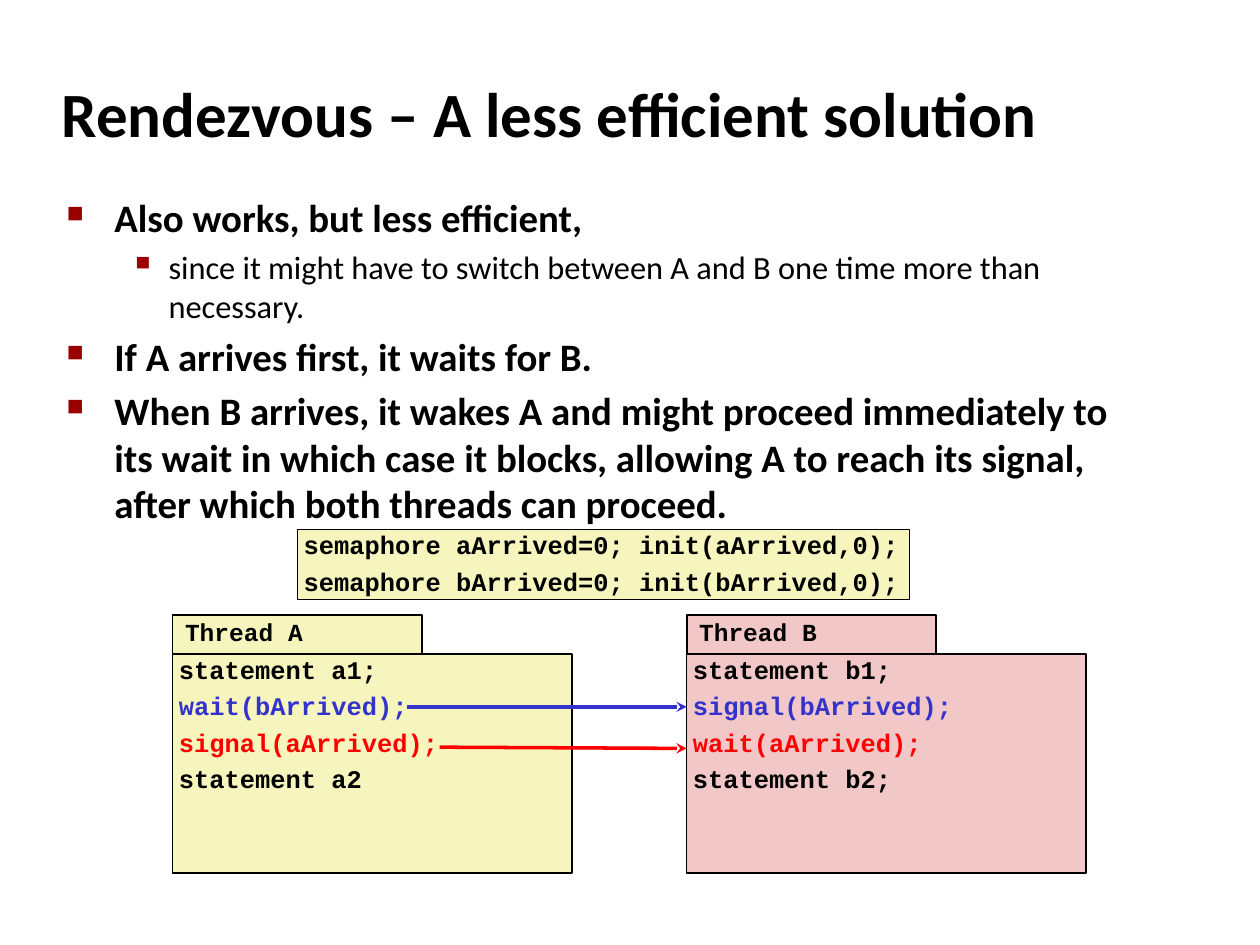
from dataclasses import dataclass

from lxml.etree import SubElement
from pptx import Presentation
from pptx.dml.color import RGBColor
from pptx.enum.shapes import MSO_CONNECTOR as Connector, MSO_SHAPE as Preset
from pptx.enum.text import MSO_ANCHOR as Anchor, MSO_AUTO_SIZE as AutoSize, PP_ALIGN as Align
from pptx.oxml.ns import qn
from pptx.util import Inches, Pt

COLORS = {
    "black": "000000",
    "bullet": "990000",
    "yellow": "F6F5BD",
    "pink": "F1C7C7",
    "blue": "3333CC",
    "red": "FF0000",
}
CODE_COLORS = ("black", "blue", "red", "black")
THREAD_TOP, THREAD_TAB_HEIGHT = 4.88, 0.31


@dataclass(frozen=True)
class Bullet:
    text: str
    level: int = 0


@dataclass(frozen=True)
class BulletStyle:
    size: float
    bold: bool
    indent: float
    hanging: float
    symbol: str
    symbol_percent: int
    space_before: float


@dataclass(frozen=True)
class CodeBox:
    left: float
    top: float
    width: float
    height: float
    fill: str
    lines: tuple[str, ...]
    colors: tuple[str, ...] = ("black", "black")
    size: float = 14.5
    line_width: float = 0.75
    side_inset: float = 0.05
    anchor: Anchor = Anchor.TOP


@dataclass(frozen=True)
class Thread:
    name: str
    left: float
    fill: str
    lines: tuple[str, ...]


@dataclass(frozen=True)
class Arrow:
    start: tuple[float, float]
    end: tuple[float, float]
    color: str


BULLET_STYLES = (
    BulletStyle(22.2, True, 0.38, 0.38, "■", 60, 4.4),
    BulletStyle(18.5, False, 0.81, 0.31, "▪", 110, 3.7),
)
BULLETS = (
    Bullet("Also works, but less efficient,"),
    Bullet("since it might have to switch between A and B one time more than necessary.", 1),
    Bullet("If A arrives first, it waits for B."),
    Bullet(
        "When B arrives, it wakes A and might proceed immediately to its wait in which "
        "case it blocks, allowing A to reach its signal, after which both threads can proceed."
    ),
)
THREADS = (
    Thread("Thread A", 1.37, "yellow",
           ("statement a1;", "wait(bArrived);", "signal(aArrived);", "statement a2")),
    Thread("Thread B", 5.45, "pink",
           ("statement b1;", "signal(bArrived);", "wait(aArrived);", "statement b2;")),
)
SEMAPHORES = CodeBox(2.36, 4.2, 4.86, 0.56, "yellow", (
    "semaphore aArrived=0; init(aArrived,0);",
    "semaphore bArrived=0; init(bArrived,0);",
))
ARROWS = (
    Arrow((3.23, 5.61), (5.45, 5.61), "blue"),
    Arrow((3.49, 5.93), (5.45, 5.94), "red"),
)


def rgb(name: str) -> RGBColor:
    return RGBColor.from_string(COLORS[name])


def apply(target, values: dict) -> None:
    for name, value in values.items():
        setattr(target, name, value)


def add_run(paragraph, text: str, font_name: str, size: float, bold=True, color="black") -> None:
    run = paragraph.add_run()
    run.text = text
    apply(run.font, {"name": font_name, "size": Pt(size), "bold": bold})
    run.font.color.rgb = rgb(color)


def paragraph_at(frame, index: int):
    return frame.add_paragraph() if index else frame.paragraphs[0]


def format_title(title) -> None:
    apply(title, {"left": Inches(0.39), "top": Inches(0.48),
                  "width": Inches(8.3), "height": Inches(0.83)})
    frame = title.text_frame
    apply(frame, {"word_wrap": True, "auto_size": AutoSize.NONE,
                  "vertical_anchor": Anchor.MIDDLE})
    frame.paragraphs[0].alignment = Align.LEFT
    add_run(frame.paragraphs[0], "Rendezvous – A less efficient solution", "Calibri", 36)


def add_symbol(paragraph, style: BulletStyle) -> None:
    properties = paragraph._p.get_or_add_pPr()
    properties.set("marL", str(Inches(style.indent)))
    properties.set("indent", str(-Inches(style.hanging)))
    color = SubElement(properties, qn("a:buClr"))
    SubElement(color, qn("a:srgbClr"), val=COLORS["bullet"])
    SubElement(properties, qn("a:buSzPct"), val=str(style.symbol_percent * 1000))
    SubElement(properties, qn("a:buChar"), char=style.symbol)


def add_bullets(slide, bullets: tuple[Bullet, ...]) -> None:
    frame = slide.shapes.add_textbox(
        Inches(0.43), Inches(1.49), Inches(8.64), Inches(2.59)).text_frame
    frame.word_wrap = True
    for index, bullet in enumerate(bullets):
        style = BULLET_STYLES[bullet.level]
        paragraph = paragraph_at(frame, index)
        apply(paragraph, {"level": bullet.level, "space_before": Pt(style.space_before)})
        add_symbol(paragraph, style)
        add_run(paragraph, bullet.text, "Calibri", style.size, style.bold)


def add_code_box(slide, box: CodeBox) -> None:
    shape = slide.shapes.add_shape(
        Preset.RECTANGLE, *map(Inches, (box.left, box.top, box.width, box.height)))
    shape.shadow.inherit = False
    shape.fill.solid()
    shape.fill.fore_color.rgb = rgb(box.fill)
    shape.line.color.rgb = rgb("black")
    shape.line.width = Pt(box.line_width)
    frame = shape.text_frame
    apply(frame, {
        "word_wrap": True, "vertical_anchor": box.anchor,
        "margin_left": Inches(box.side_inset), "margin_right": Inches(box.side_inset),
        "margin_top": Inches(0.05), "margin_bottom": Inches(0.05),
    })
    for index, (line, color) in enumerate(zip(box.lines, box.colors)):
        paragraph = paragraph_at(frame, index)
        apply(paragraph, {"alignment": Align.LEFT, "line_spacing": 0.8,
                          "space_before": Pt(6.8)})
        add_run(paragraph, line, "Courier New", box.size, color=color)


def add_thread(slide, thread: Thread) -> None:
    add_code_box(slide, CodeBox(thread.left, THREAD_TOP + THREAD_TAB_HEIGHT, 3.17, 1.74,
                                thread.fill, thread.lines, CODE_COLORS))
    add_code_box(slide, CodeBox(thread.left, THREAD_TOP, 1.98, THREAD_TAB_HEIGHT,
                                thread.fill, (thread.name,), size=14, line_width=1,
                                side_inset=0.1, anchor=Anchor.MIDDLE))


def add_arrow(slide, arrow: Arrow) -> None:
    connector = slide.shapes.add_connector(
        Connector.STRAIGHT, *map(Inches, arrow.start + arrow.end))
    connector.line.color.rgb = rgb(arrow.color)
    connector.line.width = Pt(2)
    SubElement(connector.line._get_or_add_ln(), qn("a:tailEnd"), type="stealth")
    SubElement(connector._element.spPr, qn("a:effectLst"))


def main() -> None:
    presentation = Presentation()
    apply(presentation, {"slide_width": Inches(10), "slide_height": Inches(7.5)})
    slide = presentation.slides.add_slide(presentation.slide_layouts.get_by_name("Title Only"))
    format_title(slide.shapes.title)
    add_bullets(slide, BULLETS)
    for thread in THREADS:
        add_thread(slide, thread)
    add_code_box(slide, SEMAPHORES)
    for arrow in ARROWS:
        add_arrow(slide, arrow)
    presentation.save("out.pptx")


if __name__ == "__main__":
    main()
